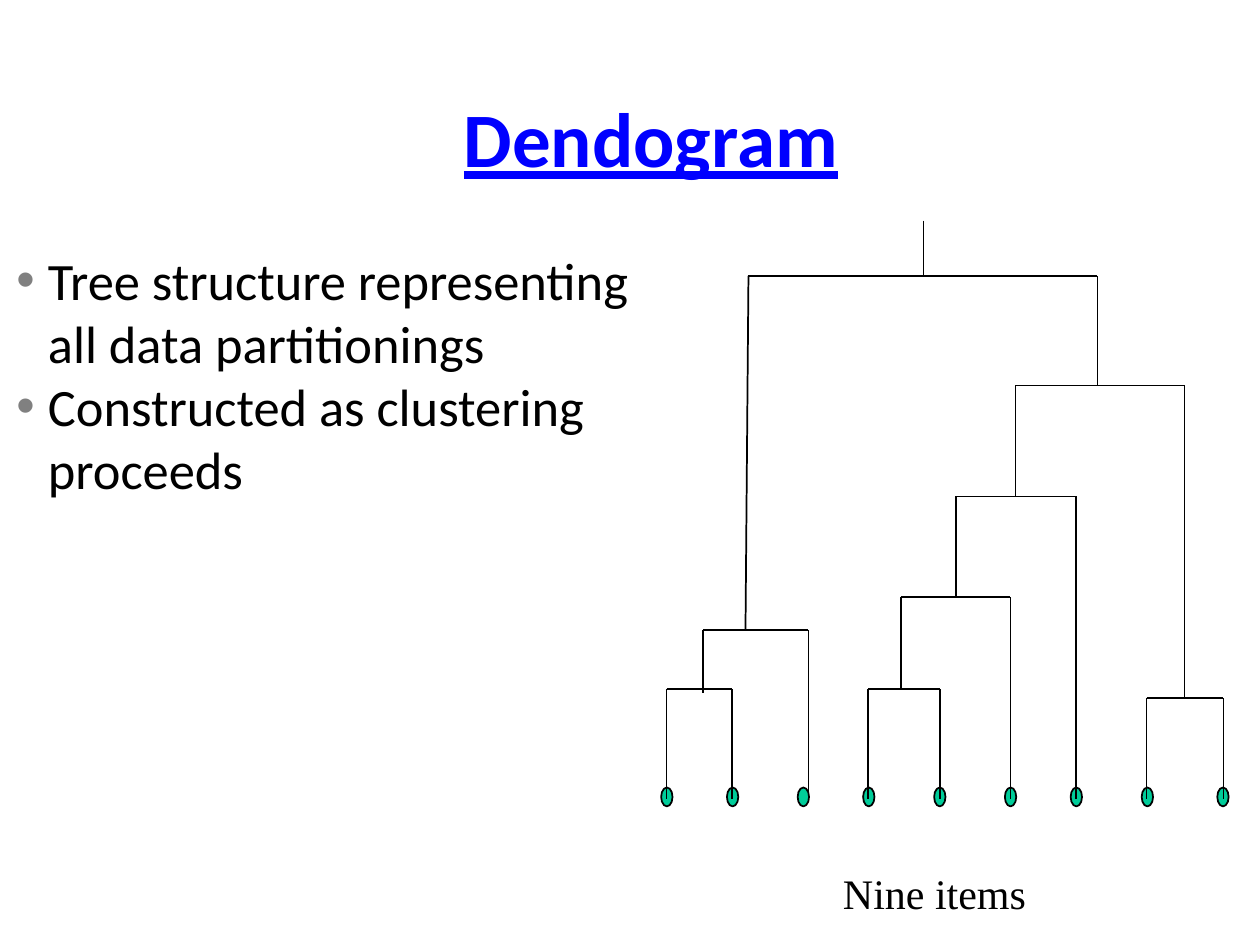
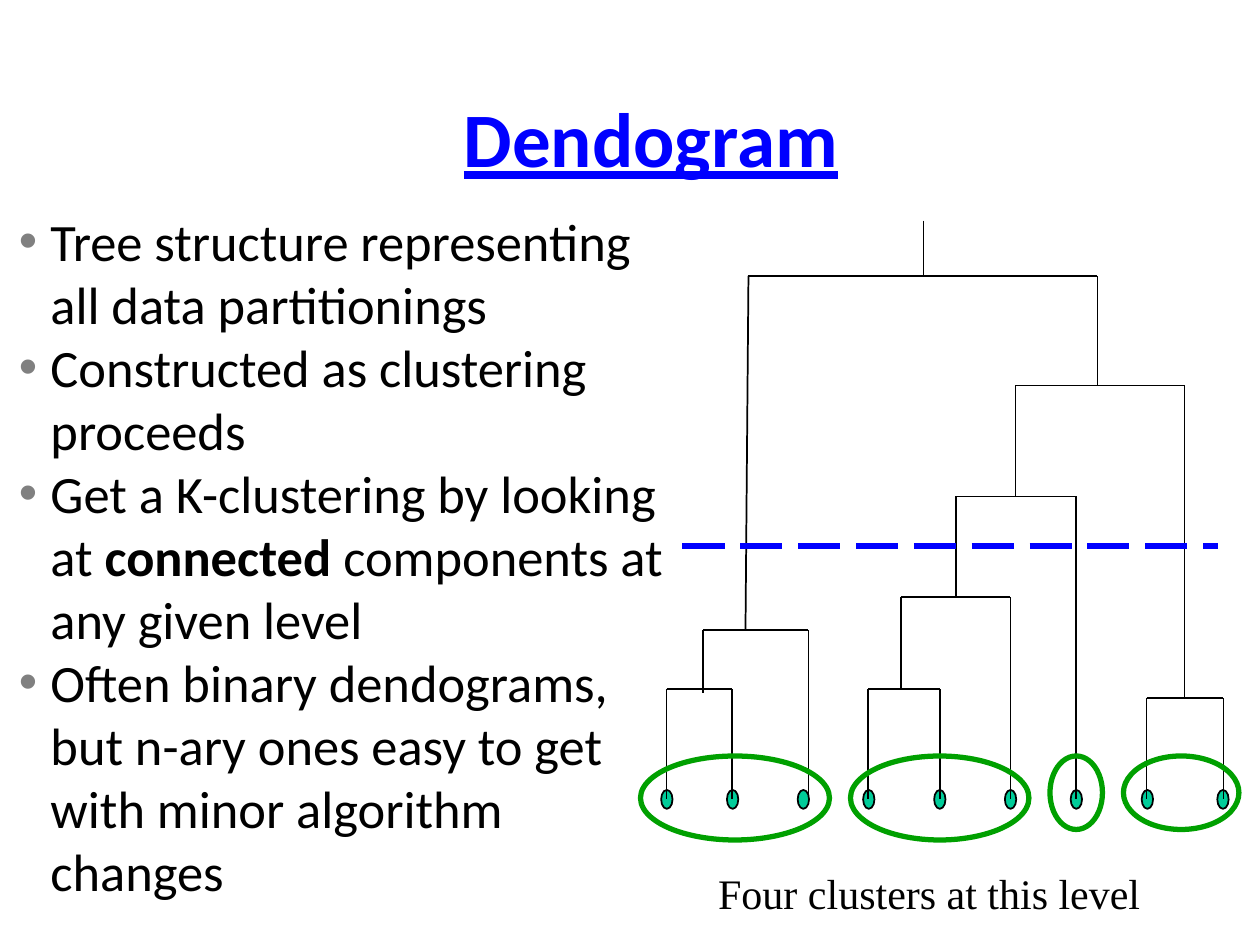
"""Build two slides that explain a dendogram and how to cut it into clusters."""
from dataclasses import dataclass

from lxml.etree import SubElement
from pptx import Presentation
from pptx.dml.color import RGBColor
from pptx.enum.dml import MSO_LINE
from pptx.enum.shapes import MSO_CONNECTOR, MSO_SHAPE
from pptx.enum.text import MSO_ANCHOR, PP_ALIGN
from pptx.oxml.ns import qn
from pptx.shapes.autoshape import Shape
from pptx.slide import Slide
from pptx.text.text import TextFrame
from pptx.util import Pt

COLORS = {
    "text": "000000",
    "title": "0000FF",
    "bullet": "808080",
    "item": "00CC99",
    "branch": "000000",
    "cut": "0000FF",
    "cluster": "00A000",
}
BODY_FONT = "Calibri"
CAPTION_FONT = "Times New Roman"
LEAF = 456.5


@dataclass(frozen=True)
class Box:
    """A rectangle in points."""
    left: float
    top: float
    width: float
    height: float


@dataclass(frozen=True)
class Words:
    """A stretch of text in one weight."""
    text: str
    bold: bool = False


@dataclass(frozen=True)
class Merge:
    """A joint of the tree with two branches hanging from a bar."""
    left: float
    right: float
    height: float
    left_end: float = LEAF
    right_end: float = LEAF
    lean: float = 0


@dataclass(frozen=True)
class Page:
    """What differs between the slides."""
    body: Box
    bullets: list[list[Words]]
    items_top: float
    caption: str
    clusters: tuple[Box, ...] = ()
    cut: bool = False


TITLE_BOX = Box(60, 36, 624, 84)
CAPTION_BOX = Box(366, 492, 336, 36)
ITEM_LEFTS = (377.8, 415.4, 455.8, 493.2, 533.8, 574.2, 611.8, 652.4, 695.6)
ROOT = (527.8, 126, 527.8, 157.7)
CUT = (390, 312, 696, 312)
MERGES = (
    Merge(380.9, 418.3, 393.8),
    Merge(401.8, 462, 360, left_end=396),
    Merge(496.1, 537.1, 393.8),
    Merge(514.8, 577.4, 341.3, left_end=393.8),
    Merge(546.5, 614.9, 283.7, left_end=341.3),
    Merge(655.2, 699.1, 398.9),
    Merge(580.3, 676.8, 220.3, left_end=283.7, right_end=398.9),
    Merge(427.7, 627.1, 157.7, left_end=360, right_end=220.3, lean=-1.7),
)
BASICS = [
    [Words("Tree structure representing all data partitionings")],
    [Words("Constructed as clustering proceeds")],
]
CUTTING = [
    [
        Words("Get a K-clustering by looking at "),
        Words("connected", bold=True),
        Words(" components at any given level"),
    ],
    [Words("Often binary dendograms, but n-ary ones easy to get with minor algorithm changes")],
]
CLUSTERS = (
    Box(366, 432, 108, 48),
    Box(486, 432, 102, 48),
    Box(600, 432, 30, 42),
    Box(642, 432, 66, 42),
)
PAGES = (
    Page(Box(-2.2, 138.2, 380.9, 354), BASICS, 450, "Nine items"),
    Page(Box(-0.7, 115.9, 388.8, 380), BASICS + CUTTING, 451.4,
         "Four clusters at this level ", CLUSTERS, cut=True),
)


def color(role: str) -> RGBColor:
    """Return the colour of a role."""
    return RGBColor.from_string(COLORS[role])


def place(box: Box) -> tuple[Pt, Pt, Pt, Pt]:
    """Return the lengths of a box."""
    return Pt(box.left), Pt(box.top), Pt(box.width), Pt(box.height)


def add_frame(slide: Slide, box: Box) -> TextFrame:
    """Add a wrapping text box and return its frame."""
    frame = slide.shapes.add_textbox(*place(box)).text_frame
    frame.word_wrap = True
    return frame


def add_words(paragraph, words: Words, font: str, size: float, role: str = "text"):
    """Add one styled run to a paragraph and return it."""
    run = paragraph.add_run()
    run.text = words.text
    run.font.name = font
    run.font.size = Pt(size)
    run.font.bold = words.bold
    run.font.color.rgb = color(role)
    return run


def add_title(slide: Slide) -> None:
    """Add the underlined title."""
    frame = add_frame(slide, TITLE_BOX)
    frame.vertical_anchor = MSO_ANCHOR.MIDDLE
    heading = frame.paragraphs[0]
    heading.alignment = PP_ALIGN.CENTER
    add_words(heading, Words("Dendogram", bold=True), BODY_FONT, 44, "title").font.underline = True


def add_bullets(slide: Slide, box: Box, bullets: list[list[Words]]) -> None:
    """Add the bulleted body text."""
    frame = add_frame(slide, box)
    for index, bullet in enumerate(bullets):
        paragraph = frame.add_paragraph() if index else frame.paragraphs[0]
        properties = paragraph._p.get_or_add_pPr()
        properties.set("marL", str(Pt(22.5)))
        properties.set("indent", str(Pt(-18)))
        tint = SubElement(properties, qn("a:buClr"))
        SubElement(tint, qn("a:srgbClr")).set("val", COLORS["bullet"])
        SubElement(properties, qn("a:buFont")).set("typeface", "Arial")
        SubElement(properties, qn("a:buChar")).set("char", "•")
        for words in bullet:
            add_words(paragraph, words, BODY_FONT, 30)


def add_caption(slide: Slide, caption: str) -> None:
    """Add the centred line below the tree."""
    paragraph = add_frame(slide, CAPTION_BOX).paragraphs[0]
    paragraph.alignment = PP_ALIGN.CENTER
    add_words(paragraph, Words(caption), CAPTION_FONT, 24)


def add_ellipse(slide: Slide, box: Box, outline: str, weight: float) -> Shape:
    """Add an unfilled ellipse."""
    ellipse = slide.shapes.add_shape(MSO_SHAPE.OVAL, *place(box))
    ellipse.shadow.inherit = False
    ellipse.fill.background()
    ellipse.line.color.rgb = color(outline)
    ellipse.line.width = Pt(weight)
    return ellipse


def add_line(slide: Slide, ends: tuple[float, ...], role: str = "branch",
             weight: float = 1, dash: MSO_LINE | None = None) -> None:
    """Add a straight line without a shadow."""
    line = slide.shapes.add_connector(MSO_CONNECTOR.STRAIGHT, *map(Pt, ends))
    line.line.color.rgb = color(role)
    line.line.width = Pt(weight)
    if dash:
        line.line.dash_style = dash
    SubElement(line._element.spPr, qn("a:effectLst"))


def add_merge(slide: Slide, merge: Merge) -> None:
    """Add the bar and both branches of a merge."""
    add_line(slide, (merge.left, merge.height, merge.right, merge.height))
    add_line(slide, (merge.left, merge.height, merge.left + merge.lean, merge.left_end))
    add_line(slide, (merge.right, merge.height, merge.right, merge.right_end))


def add_tree(slide: Slide, items_top: float) -> None:
    """Add the items and the tree above them."""
    for left in ITEM_LEFTS:
        item = add_ellipse(slide, Box(left, items_top, 6.5, 10.8), "branch", 1)
        item.fill.solid()
        item.fill.fore_color.rgb = color("item")
    for merge in MERGES:
        add_merge(slide, merge)
    add_line(slide, ROOT)


def add_page(deck, page: Page) -> None:
    """Add one complete slide."""
    slide = deck.slides.add_slide(deck.slide_layouts[6])
    add_bullets(slide, page.body, page.bullets)
    add_title(slide)
    add_tree(slide, page.items_top)
    if page.cut:
        add_line(slide, CUT, "cut", 3, MSO_LINE.LONG_DASH)
    for cluster in page.clusters:
        add_ellipse(slide, cluster, "cluster", 3)
    add_caption(slide, page.caption)


def main() -> None:
    """Build and save the deck."""
    deck = Presentation()
    deck.slide_width, deck.slide_height = Pt(720), Pt(540)
    for page in PAGES:
        add_page(deck, page)
    deck.save("out.pptx")


if __name__ == "__main__":
    main()
